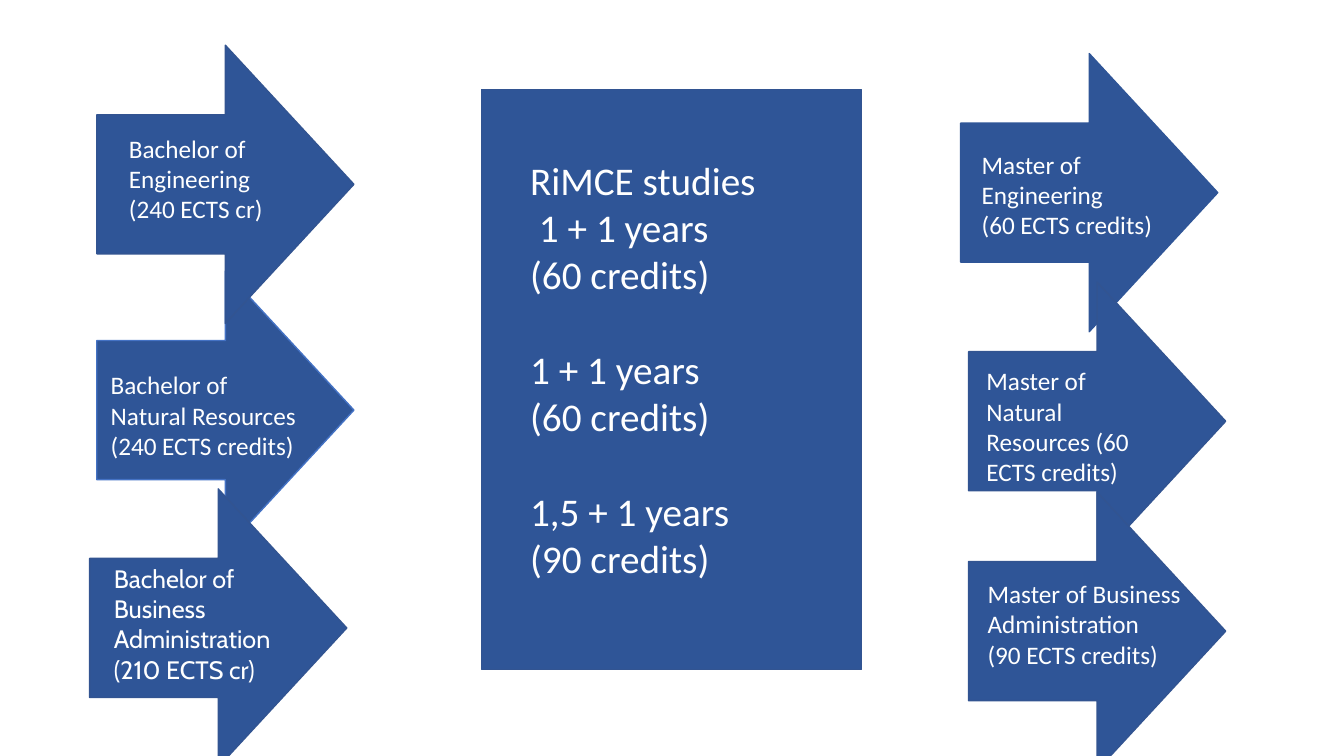
from dataclasses import dataclass
from pptx import Presentation
from pptx.dml.color import RGBColor
from pptx.enum.shapes import MSO_SHAPE
from pptx.enum.text import MSO_AUTO_SIZE
from pptx.util import Cm, Pt


@dataclass(frozen=True)
class Theme:
    fill: RGBColor = RGBColor(0x2F, 0x55, 0x97)
    edge: RGBColor = RGBColor(0x32, 0x54, 0x91)
    bright_edge: RGBColor = RGBColor(0x44, 0x72, 0xC4)
    text: RGBColor = RGBColor(0xFF, 0xFF, 0xFF)
    font: str = "Calibri"
    alt_font: str = "Cabin"
    degree_size: Pt = Pt(18)
    studies_size: Pt = Pt(28)
    studies_gap: Pt = Pt(34.2)


theme = Theme()
deck = Presentation()
deck.slide_width, deck.slide_height = Cm(33.87), Cm(19.05)
slide = deck.slides.add_slide(deck.slide_layouts[6])


def add_block(kind, box, edge):
    block = slide.shapes.add_shape(kind, *[Cm(v) for v in box])
    block.shadow.inherit = False
    block.fill.solid()
    block.fill.fore_color.rgb = theme.fill
    block.line.color.rgb = edge
    block.line.width = Pt(1)


def add_label(box, lines, size, font):
    frame = slide.shapes.add_textbox(*[Cm(v) for v in box]).text_frame
    frame.word_wrap = True
    frame.auto_size = MSO_AUTO_SIZE.SHAPE_TO_FIT_TEXT
    for i, line in enumerate(lines):
        paragraph = frame.add_paragraph() if i else frame.paragraphs[0]
        run = paragraph.add_run()
        run.text = line
        run.font.size = size
        run.font.name = font
        run.font.color.rgb = theme.text
    return frame


add_block(MSO_SHAPE.RECTANGLE, (12.14, 2.26, 9.58, 14.61), theme.edge)
studies = add_label(
    (13.11, 3.81, 7.67, 11.02),
    ["RiMCE studies", " 1 + 1 years", "(60 credits)", "1 + 1 years",
     "(60 credits)", "1,5 + 1 years", "(90 credits)"],
    theme.studies_size, theme.font)
for group_start in (3, 5):
    studies.paragraphs[group_start].space_before = theme.studies_gap

degrees = [
    ((2.44, 6.83), theme.bright_edge, (2.54, 9.19, 5.36, 2.57), theme.font,
     ["Bachelor of Natural Resources (240 ECTS credits)"]),
    ((2.26, 12.32), theme.edge, (2.62, 14.07, 4.57, 3.33), theme.alt_font,
     ["Bachelor of Business Administration (210 ECTS cr)"]),
    ((2.44, 1.14), theme.edge, (3, 3.23, 4.01, 2.57), theme.font,
     ["Bachelor of Engineering (240 ECTS cr)"]),
    ((24.21, 1.35), theme.fill, (24.49, 3.63, 5.31, 2.57), theme.font,
     ["Master of Engineering", "(60 ECTS credits)"]),
    ((24.41, 7.11), theme.edge, (24.61, 9.09, 4.95, 3.33), theme.font,
     ["Master of Natural Resources (60 ECTS credits)"]),
    ((24.41, 12.4), theme.edge, (24.64, 14.45, 6.6, 2.57), theme.font,
     ["Master of Business Administration", "(90 ECTS credits)"]),
]
for corner, edge, label_box, font, lines in degrees:
    add_block(MSO_SHAPE.RIGHT_ARROW, (*corner, 6.48, 7.01), edge)
    add_label(label_box, lines, theme.degree_size, font)

deck.save("out.pptx")
